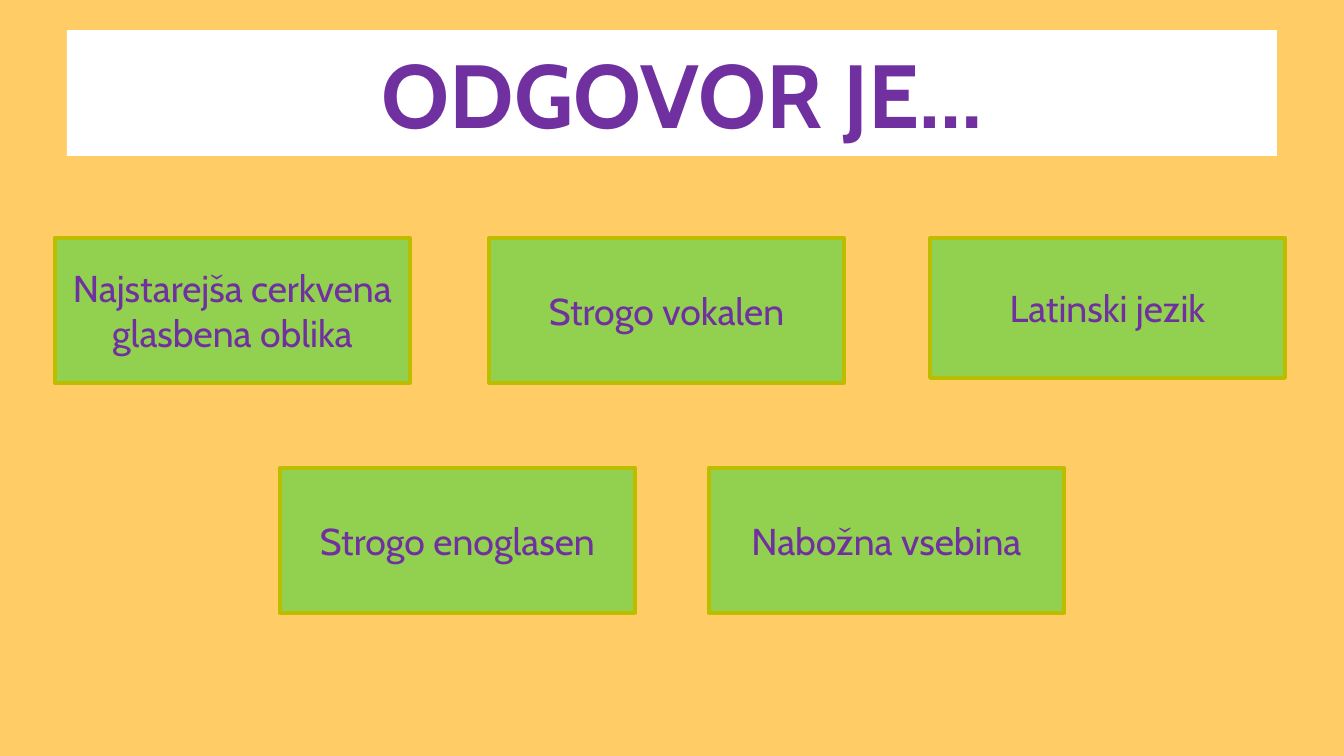
from pptx import Presentation
from pptx import util as u
from pptx.dml import color
from pptx.enum import shapes, text

EMU_PER_PX = u.Inches(10) / 1344


def px(n):
    return u.Emu(round(n * EMU_PER_PX))


def rgb(value):
    return color.RGBColor.from_string(value)


class Deck:
    font = "Cabin"
    ink = "7030A0"
    card_fill = "92D050"
    card_line = "BDBD00"

    def __init__(self, width, height):
        self.prs = Presentation()
        self.prs.slide_width, self.prs.slide_height = px(width), px(height)

    def slide(self, background):
        self.s = self.prs.slides.add_slide(self.prs.slide_layouts[6])
        fill = self.s.background.fill
        fill.solid()
        fill.fore_color.rgb = rgb(background)

    def box(self, x, y, w, h, fill, runs, size, bold=False):
        sp = self.s.shapes.add_shape(
            shapes.MSO_SHAPE.RECTANGLE, px(x), px(y), px(w), px(h))
        sp.shadow.inherit = False
        sp.fill.solid()
        sp.fill.fore_color.rgb = rgb(fill)
        sp.line.fill.background()
        tf = sp.text_frame
        tf.word_wrap = True
        tf.vertical_anchor = text.MSO_ANCHOR.MIDDLE
        p = tf.paragraphs[0]
        p.alignment = text.PP_ALIGN.CENTER
        for words in runs:
            r = p.add_run()
            r.text = words
            r.font.name = self.font
            r.font.size = u.Pt(size)
            r.font.bold = bold
            r.font.color.rgb = rgb(self.ink)
        return sp

    def title(self, x, y, w, h, runs):
        self.box(x, y, w, h, "FFFFFF", runs, 48, bold=True)

    def card(self, x, y, w, h, words):
        sp = self.box(x, y, w, h, self.card_fill, [words], 20)
        sp.line.color.rgb = rgb(self.card_line)
        sp.line.width = u.Pt(2)


def main():
    deck = Deck(1344, 756)
    deck.slide("FFCC66")
    deck.title(67, 30, 1210, 126, [" ", "ODGOVOR JE…"])

    card_width, top_row, bottom_row = 355, 238, 468
    cards = [
        (55, top_row, 145, "Najstarejša cerkvena glasbena oblika"),
        (280, bottom_row, 145, "Strogo enoglasen"),
        (489, top_row, 145, "Strogo vokalen"),
        (709, bottom_row, 145, "Nabožna vsebina"),
        (930, top_row, 140, "Latinski jezik"),
    ]
    for x, y, h, words in cards:
        deck.card(x, y, card_width, h, words)

    deck.prs.save("out.pptx")


if __name__ == "__main__":
    main()
